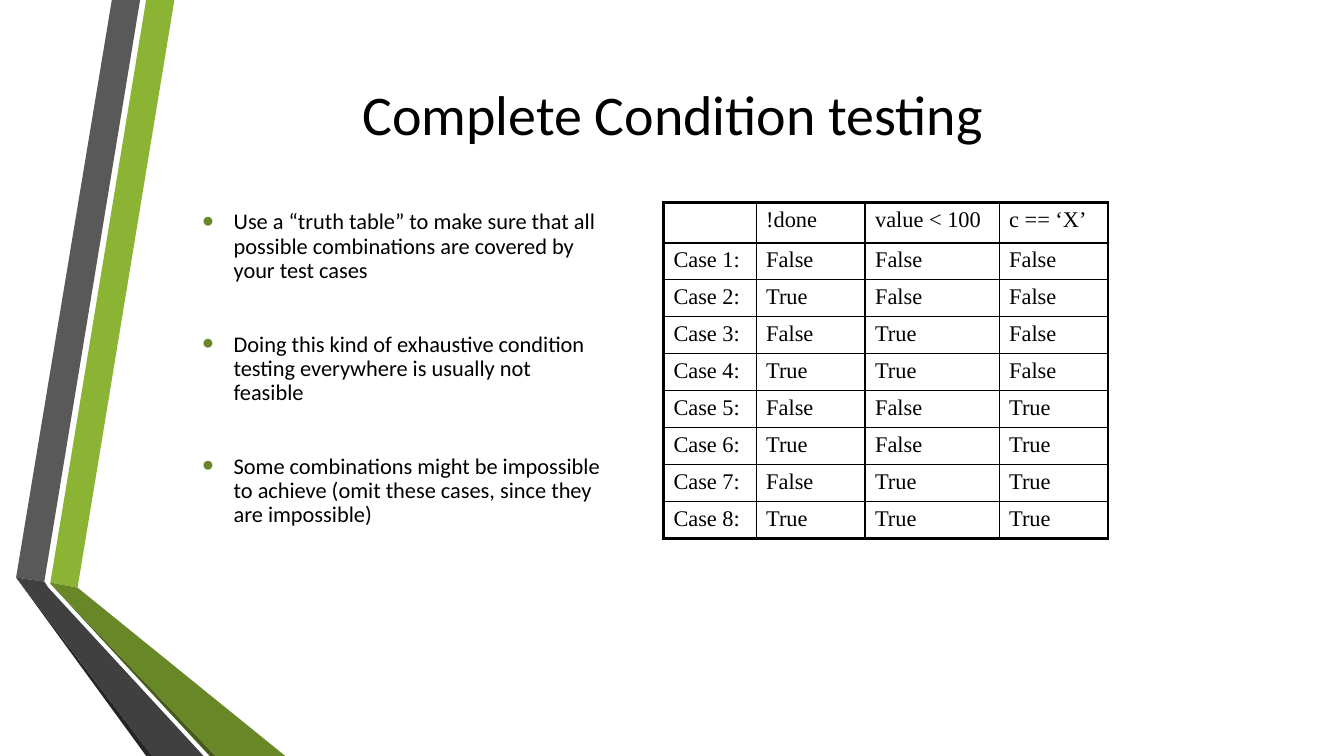
from lxml import etree
from pptx import Presentation
from pptx.dml.color import RGBColor
from pptx.enum.text import MSO_ANCHOR, PP_ALIGN
from pptx.oxml.ns import qn
from pptx.util import Inches, Pt

MIDDLE = MSO_ANCHOR.MIDDLE
CENTER = PP_ALIGN.CENTER
TITLE_ONLY = 5
BLACK = "000000"
BULLET_GREEN = "688727"
THIN, THICK = 1, 2.25

RIBBONS = [
    ("8BB434", [(0.5, 5.78), (0.77, 5.83), (1.73, 0), (1.45, 0)]),
    ("595959", [(1.39, 0), (1.11, 0), (0.16, 5.73), (0.44, 5.77)]),
    ("262626", [(0.16, 5.73), (1.45, 7.5), (1.51, 7.5)]),
    ("465A1A", [(0.5, 5.79), (2.08, 7.5), (2.14, 7.5)]),
    ("688727", [(0.5, 5.78), (0.5, 5.79), (2.14, 7.5), (2.83, 7.5), (0.77, 5.83)]),
    ("404040", [(0.16, 5.73), (1.51, 7.5), (2.02, 7.5), (0.48, 5.83), (0.44, 5.77)]),
]
ADVICE = [
    "Use a “truth table” to make sure that all possible combinations are covered by your test cases",
    "Doing this kind of exhaustive condition testing everywhere is usually not feasible",
    "Some combinations might be impossible to achieve (omit these cases, since they are impossible)",
]
CONDITIONS = ["!done", "value < 100", "c == ‘X’"]
COLUMN_WIDTHS = [0.92, 1.08, 1.33, 1.08]
HEADER_HEIGHT = 0.4


def color(hex_value):
    return RGBColor.from_string(hex_value)


def set_font(paragraph, name, size):
    paragraph.font.name = name
    paragraph.font.size = Pt(size)
    paragraph.font.color.rgb = color(BLACK)


def place(shape, box):
    shape.left, shape.top, shape.width, shape.height = map(Inches, box)


def add_ribbons(slide, left, top):
    for fill, points in RIBBONS:
        corners = [(Inches(left + x), Inches(top + y)) for x, y in points]
        outline = slide.shapes.build_freeform(*corners[0])
        outline.add_line_segments(corners[1:], close=True)
        ribbon = outline.convert_to_shape()
        ribbon.shadow.inherit = False
        ribbon.fill.solid()
        ribbon.fill.fore_color.rgb = color(fill)
        ribbon.line.fill.background()


def add_title(slide, box):
    title = slide.shapes.title
    place(title, box)
    title.text_frame.text = "Complete Condition testing"
    title.text_frame.vertical_anchor = MIDDLE
    heading = title.text_frame.paragraphs[0]
    heading.alignment = CENTER
    set_font(heading, "Calibri", 40)


def add_bullet(paragraph):
    properties = paragraph._p.get_or_add_pPr()
    properties.set("marL", str(Inches(0.31)))
    properties.set("indent", str(-Inches(0.31)))
    bullet_color = etree.SubElement(properties, qn("a:buClr"))
    etree.SubElement(bullet_color, qn("a:srgbClr"), val=BULLET_GREEN)
    etree.SubElement(properties, qn("a:buSzPct"), val="145000")
    etree.SubElement(properties, qn("a:buFont"), typeface="Arial")
    etree.SubElement(properties, qn("a:buChar"), char="•")


def add_advice(slide, box):
    frame = slide.shapes.add_textbox(*map(Inches, box)).text_frame
    frame.word_wrap = True
    frame.vertical_anchor = MIDDLE
    frame.text = "\n".join(ADVICE)
    for index, paragraph in enumerate(frame.paragraphs):
        paragraph.line_spacing = 0.9
        paragraph.space_before = Pt(35.4 if index else 0)
        paragraph.space_after = Pt(0)
        add_bullet(paragraph)
        set_font(paragraph, "Calibri", 16)


def truth_rows():
    """Header row, then every combination with the first condition changing fastest."""
    rows = [[""] + CONDITIONS]
    for case in range(2 ** len(CONDITIONS)):
        values = [str(bool(case >> bit & 1)) for bit in range(len(CONDITIONS))]
        rows.append([f"Case {case + 1}:"] + values)
    return rows


def set_borders(cell, edges):
    """Draw the four sides; edges maps L, R, T and B to whether that side is outer."""
    properties = cell._tc.get_or_add_tcPr()
    for side, is_outer in edges.items():
        width = Pt(THICK if is_outer else THIN)
        border = etree.SubElement(properties, qn(f"a:ln{side}"), w=str(width))
        fill = etree.SubElement(border, qn("a:solidFill"))
        etree.SubElement(fill, qn("a:srgbClr"), val=BLACK)


def add_truth_table(slide, box):
    rows = truth_rows()
    last_row, last_column = len(rows) - 1, len(CONDITIONS)
    table = slide.shapes.add_table(len(rows), last_column + 1, *map(Inches, box)).table
    table.first_row = table.horz_banding = False
    for column, width in zip(table.columns, COLUMN_WIDTHS):
        column.width = Inches(width)
    case_height = (box[3] - HEADER_HEIGHT) / last_row
    for r, values in enumerate(rows):
        table.rows[r].height = Inches(case_height if r else HEADER_HEIGHT)
        for c, value in enumerate(values):
            cell = table.cell(r, c)
            cell.text = value
            set_font(cell.text_frame.paragraphs[0], "Times New Roman", 16)
            set_borders(cell, {"L": c == 0, "R": c == last_column,
                               "T": r == 0, "B": r == last_row})
            cell.fill.background()


def main():
    deck = Presentation()
    deck.slide_width, deck.slide_height = Inches(13.33), Inches(7.5)
    slide = deck.slides.add_slide(deck.slide_layouts[TITLE_ONLY])
    add_ribbons(slide, 0, 0)
    add_title(slide, (2.42, 0.5, 8.5, 1.25))
    add_advice(slide, (1.91, 2, 4.17, 3.32))
    add_truth_table(slide, (6.58, 2.01, 4.42, 3.33))
    deck.save("out.pptx")


if __name__ == "__main__":
    main()
